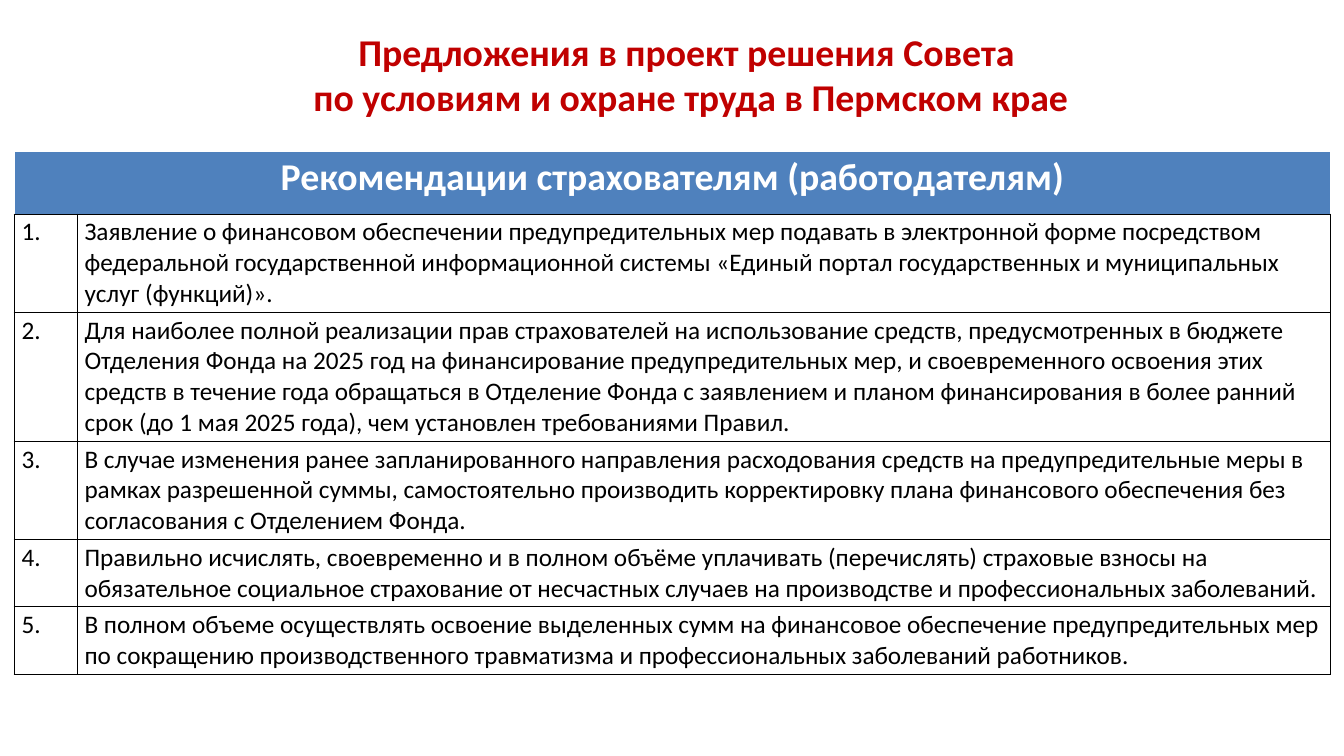
"""Builds the slide of recommendations to insured employers."""
import pptx
import pptx.dml.color
import pptx.enum.text
import pptx.oxml
import pptx.oxml.ns
import pptx.util

PX = 914400 / 75.6
RED = pptx.dml.color.RGBColor(0xC0, 0x00, 0x00)
BLUE = pptx.dml.color.RGBColor(0x4F, 0x81, 0xBD)
WHITE = pptx.dml.color.RGBColor(0xFF, 0xFF, 0xFF)
BLACK = pptx.dml.color.RGBColor(0x00, 0x00, 0x00)
CENTER = pptx.enum.text.PP_ALIGN.CENTER
LEFT = pptx.enum.text.PP_ALIGN.LEFT
TOP = pptx.enum.text.MSO_ANCHOR.TOP

TITLE = ["Предложения в проект решения Совета ",
         "по условиям и охране труда в Пермском крае"]
HEADING = "Рекомендации страхователям (работодателям)"
HEADING_HEIGHT = 63
COLUMN_WIDTHS = [63, 1254]
RECOMMENDATIONS = [
    (98, "Заявление о финансовом обеспечении предупредительных мер подавать в "
         "электронной форме посредством федеральной государственной информационной "
         "системы «Единый портал государственных и муниципальных услуг (функций)»."),
    (128, "Для наиболее полной реализации прав страхователей на использование средств, "
          "предусмотренных в бюджете Отделения Фонда на 2025 год на финансирование "
          "предупредительных мер, и своевременного освоения этих средств в течение года "
          "обращаться в Отделение Фонда с заявлением и планом финансирования в более "
          "ранний срок (до 1 мая 2025 года), чем установлен требованиями Правил."),
    (98, "В случае изменения ранее запланированного направления расходования средств на "
         "предупредительные меры в рамках разрешенной суммы, самостоятельно производить "
         "корректировку плана финансового обеспечения без согласования с Отделением Фонда."),
    (67, "Правильно исчислять, своевременно и в полном объёме уплачивать (перечислять) "
         "страховые взносы на обязательное социальное страхование от несчастных случаев "
         "на производстве и профессиональных заболеваний."),
    (67, "В полном объеме осуществлять освоение выделенных сумм на финансовое обеспечение "
         "предупредительных мер по сокращению производственного травматизма и "
         "профессиональных заболеваний работников."),
]


def px(length):
    return pptx.util.Emu(round(length * PX))


def write_text(frame, lines, size=24, color=BLACK, bold=False, align=LEFT):
    for index, line in enumerate(lines):
        para = frame.paragraphs[0] if index == 0 else frame.add_paragraph()
        para.alignment = align
        span = para.add_run()
        span.text = line
        span.font.name = "Calibri"
        span.font.size = pptx.util.Pt(size)
        span.font.bold = bold
        span.font.color.rgb = color


def set_borders(cell, **colors):
    properties = cell._tc.get_or_add_tcPr()
    for index, side in enumerate("LRTB"):
        color = colors.get(side, BLACK)
        properties.insert(index, pptx.oxml.parse_xml(
            f'<a:ln{side} {pptx.oxml.ns.nsdecls("a")} w="12700"><a:solidFill>'
            f'<a:srgbClr val="{color}"/></a:solidFill></a:ln{side}>'))


def add_title(page):
    box = page.shapes.title
    box.left, box.top, box.width, box.height = map(px, (162, 25, 1058, 99))
    frame = box.text_frame
    frame.word_wrap = True
    frame.auto_size = pptx.enum.text.MSO_AUTO_SIZE.NONE
    frame.vertical_anchor = TOP
    write_text(frame, TITLE, size=36, color=RED, bold=True, align=CENTER)


def add_heading(table):
    table.cell(0, 0).merge(table.cell(0, 1))
    for cell in table.rows[0].cells:
        cell.fill.solid()
        cell.fill.fore_color.rgb = BLUE
        set_borders(cell, L=WHITE, R=WHITE, T=WHITE)
    write_text(table.cell(0, 0).text_frame, [HEADING],
               size=36, color=WHITE, bold=True, align=CENTER)


def fill_cell(cell, text):
    cell.margin_top = cell.margin_bottom = px(3)
    cell.vertical_anchor = TOP
    cell.fill.background()
    set_borders(cell)
    write_text(cell.text_frame, [text])


def add_recommendations(page):
    heights = [HEADING_HEIGHT] + [height for height, _ in RECOMMENDATIONS]
    table = page.shapes.add_table(
        len(heights), len(COLUMN_WIDTHS), px(14), px(151),
        px(sum(COLUMN_WIDTHS)), px(sum(heights))).table
    table.horz_banding = False
    for column, width in zip(table.columns, COLUMN_WIDTHS):
        column.width = px(width)
    for row, height in zip(table.rows, heights):
        row.height = px(height)
    add_heading(table)
    for number, (_, text) in enumerate(RECOMMENDATIONS, 1):
        fill_cell(table.cell(number, 0), f"{number}.")
        fill_cell(table.cell(number, 1), text)


def main():
    deck = pptx.Presentation()
    deck.slide_width, deck.slide_height = px(1344), px(756)
    page = deck.slides.add_slide(deck.slide_layouts[5])
    add_title(page)
    add_recommendations(page)
    deck.save("out.pptx")


if __name__ == "__main__":
    main()
